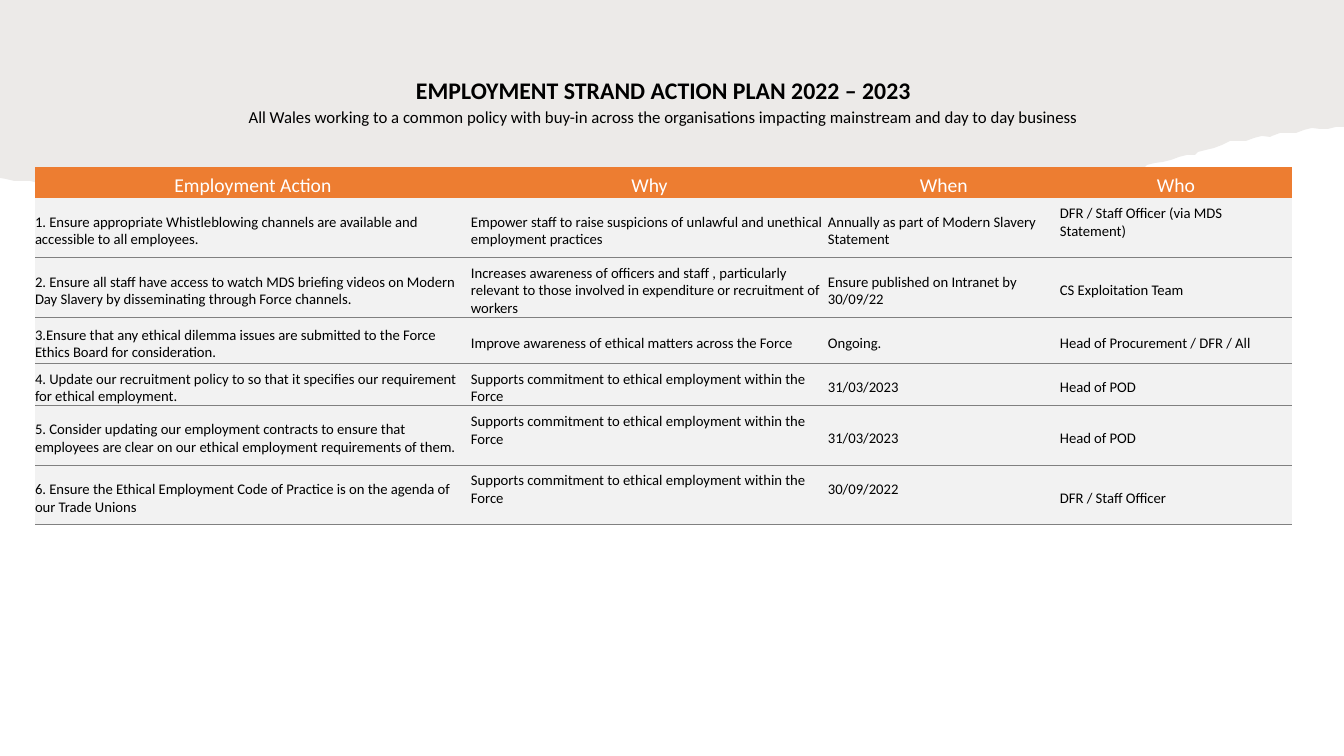
from dataclasses import dataclass
from itertools import pairwise
from math import sin

from pptx import Presentation, util as u
from pptx.dml.color import RGBColor
from pptx.enum import text
from pptx.oxml import parse_xml
from pptx.oxml.ns import nsdecls, qn

# Content
TITLE = "EMPLOYMENT STRAND ACTION PLAN 2022 – 2023"
SUBTITLE = ("All Wales working to a common policy with buy-in across the "
            "organisations impacting mainstream and day to day business")
HEADINGS = ("Employment Action", "Why", "When", "Who")
COMMITMENT = "Supports commitment to ethical employment within the Force"
ACTIONS = [
    ("1. Ensure appropriate Whistleblowing channels are available and accessible to all employees.",
     "Empower staff to raise suspicions of unlawful and unethical employment practices",
     "Annually as part of Modern Slavery Statement",
     "DFR / Staff Officer (via MDS Statement)"),
    ("2. Ensure all staff have access to watch MDS briefing videos on Modern Day Slavery "
     "by disseminating through Force channels.",
     "Increases awareness of officers and staff , particularly relevant to those involved "
     "in expenditure or recruitment of workers",
     "Ensure published on Intranet by 30/09/22",
     "CS Exploitation Team"),
    ("3.Ensure that any ethical dilemma issues are submitted to the Force Ethics Board "
     "for consideration.",
     "Improve awareness of ethical matters across the Force",
     "Ongoing.",
     "Head of Procurement / DFR / All"),
    ("4. Update our recruitment policy to so that it specifies our requirement "
     "for ethical employment.",
     COMMITMENT, "31/03/2023", "Head of POD"),
    ("5. Consider updating our employment contracts to ensure that employees are clear "
     "on our ethical employment requirements of them.",
     COMMITMENT, "31/03/2023", "Head of POD"),
    ("6. Ensure the Ethical Employment Code of Practice is on the agenda of our Trade Unions",
     COMMITMENT, "30/09/2022", "DFR / Staff Officer"),
]
RAISED = {(1, 3), (5, 1), (6, 1), (6, 2)}  # (row, column) of text set one half-line higher

# Layout, in px
PAGE = (1344, 756)
TITLE_BOX = (35, 67, 1257, 64)
TABLE_AT = (35, 167)
COLUMNS = (436, 357, 232, 232)
ROWS = (31, 60, 60, 46, 42, 60, 59)
CELL_TOP, CELL_RIGHT, RAISE = 6, 2, 17

# The paper's lower edge: its main bends, right to left, and the tear between them
BENDS = [(1344, 128), (1320, 128), (1270, 136), (1230, 142), (1195, 154), (1145, 166),
         (1070, 191), (860, 215), (670, 229), (500, 221), (360, 205), (270, 214), (0, 178)]
TEAR_STEP, TEAR_DEPTH = 8, 1


@dataclass(frozen=True)
class Theme:
    font: str = "Calibri"
    ink: str = "000000"
    white: str = "FFFFFF"
    header: str = "ED7D31"
    body: str = "F2F2F2"
    rule: str = "808080"
    paper: str = "82766A"
    paper_alpha: int = 15
    title_pt: float = 17
    subtitle_pt: float = 12
    header_pt: float = 14
    body_pt: float = 10.5
    rule_pt: float = 0.75


THEME = Theme()
EMU_PER_PX = 914400 / 100.8


def px(length):
    return u.Emu(round(length * EMU_PER_PX))


def paint(shape_or_cell, colour):
    shape_or_cell.fill.solid()
    shape_or_cell.fill.fore_color.rgb = RGBColor.from_string(colour)


def style(para, size, colour, align, bold=False):
    para.alignment = align
    para.font.name, para.font.size, para.font.bold = THEME.font, u.Pt(size), bold
    para.font.color.rgb = RGBColor.from_string(colour)


def torn_edge():
    """Walk from bend to bend in short steps, each nudged up or down a little."""
    for (x, y), (next_x, next_y) in pairwise(BENDS):
        slope = (next_y - y) / (next_x - x)
        for step_x in range(x, next_x, -TEAR_STEP):
            yield step_x, y + slope * (step_x - x) + TEAR_DEPTH * sin(step_x)
    yield BENDS[-1]


def add_paper(page):
    builder = page.shapes.build_freeform(0, 0, scale=EMU_PER_PX)
    builder.add_line_segments([(PAGE[0], 0), *torn_edge()], close=True)
    paper = builder.convert_to_shape()
    paper.shadow.inherit = False
    paper.line.fill.background()
    paint(paper, THEME.paper)
    colour = next(paper.element.spPr.iter(qn("a:srgbClr")))
    colour.append(parse_xml(f'<a:alpha {nsdecls("a")} val="{THEME.paper_alpha * 1000}"/>'))
    page.shapes.title.element.addprevious(paper.element)  # behind the title


def fill_title(title):
    title.left, title.top, title.width, title.height = map(px, TITLE_BOX)
    frame = title.text_frame
    frame.text = f"{TITLE}\n{SUBTITLE}"
    frame.word_wrap = True
    frame.auto_size = text.MSO_AUTO_SIZE.NONE
    frame.vertical_anchor = text.MSO_ANCHOR.BOTTOM
    heading, subheading = frame.paragraphs
    style(heading, THEME.title_pt, THEME.ink, text.PP_ALIGN.CENTER, bold=True)
    style(subheading, THEME.subtitle_pt, THEME.ink, text.PP_ALIGN.CENTER)
    for para in (heading, subheading):
        para.line_spacing = 0.7
        para.space_before, para.space_after = u.Pt(0), u.Pt(6)


def fill_cell(cell, words, colour):
    cell.text = words
    cell.vertical_anchor = text.MSO_ANCHOR.MIDDLE
    cell.margin_left = cell.margin_right = cell.margin_bottom = 0
    cell.margin_top = px(CELL_TOP)
    paint(cell, colour)
    return cell.text_frame.paragraphs[0]


def fill_heading(cell, words):
    para = fill_cell(cell, words, THEME.header)
    style(para, THEME.header_pt, THEME.white, text.PP_ALIGN.CENTER)


def fill_entry(cell, words, raised):
    para = fill_cell(cell, words, THEME.body)
    style(para, THEME.body_pt, THEME.ink, text.PP_ALIGN.LEFT)
    cell.margin_right = px(CELL_RIGHT)
    if raised:
        cell.margin_bottom = px(RAISE)
    # Rule below the cell
    cell._tc.get_or_add_tcPr().insert(0, parse_xml(
        f'<a:lnB {nsdecls("a")} w="{u.Pt(THEME.rule_pt)}"><a:solidFill>'
        f'<a:srgbClr val="{THEME.rule}"/></a:solidFill></a:lnB>'))


def add_plan(page):
    size = map(px, (sum(COLUMNS), sum(ROWS)))
    frame = page.shapes.add_table(len(ROWS), len(COLUMNS), *map(px, TABLE_AT), *size)
    plan = frame.table
    plan.horz_banding = False
    plain_style = "{2D5ABB26-0587-4C30-8999-92F81FD0307C}"
    next(frame.element.iter(qn("a:tableStyleId"))).text = plain_style
    for column, width in zip(plan.columns, COLUMNS):
        column.width = px(width)
    for row, height in zip(plan.rows, ROWS):
        row.height = px(height)
    for c, words in enumerate(HEADINGS):
        fill_heading(plan.cell(0, c), words)
    for r, action in enumerate(ACTIONS, start=1):
        for c, words in enumerate(action):
            fill_entry(plan.cell(r, c), words, raised=(r, c) in RAISED)


def main():
    deck = Presentation()
    deck.slide_width, deck.slide_height = map(px, PAGE)
    page = deck.slides.add_slide(deck.slide_layouts[5])  # title only
    fill_title(page.shapes.title)
    add_paper(page)
    add_plan(page)
    deck.save("out.pptx")


if __name__ == "__main__":
    main()
